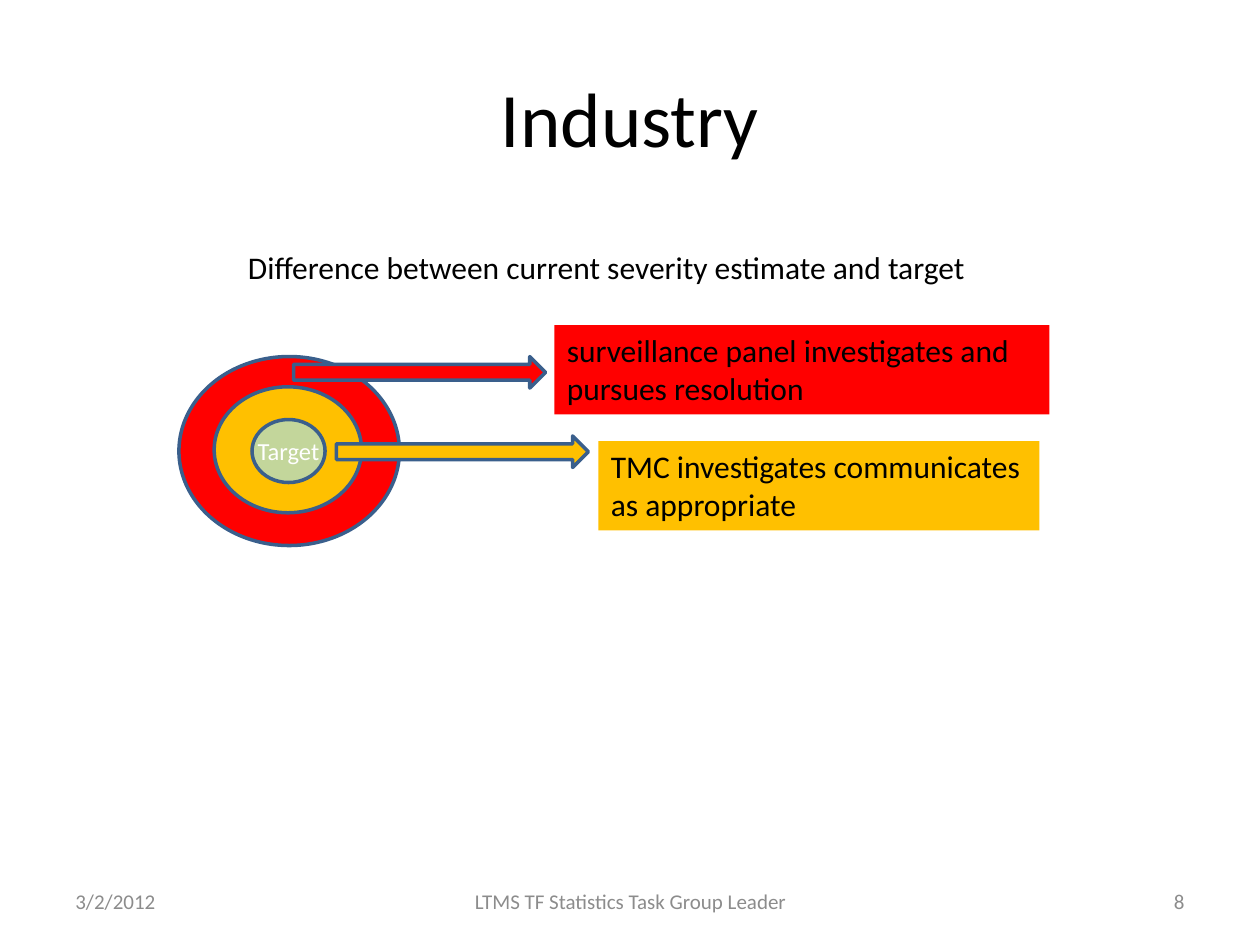
from pptx import Presentation
from pptx.dml.color import RGBColor
from pptx.enum.shapes import MSO_SHAPE
from pptx.enum.text import MSO_ANCHOR, PP_ALIGN
from pptx.util import Inches, Pt

OVAL, ARROW, RECTANGLE = MSO_SHAPE.OVAL, MSO_SHAPE.RIGHT_ARROW, MSO_SHAPE.RECTANGLE
LEFT, CENTER, RIGHT = PP_ALIGN.LEFT, PP_ALIGN.CENTER, PP_ALIGN.RIGHT
TOP, MIDDLE = MSO_ANCHOR.TOP, MSO_ANCHOR.MIDDLE

BLACK = RGBColor(0x00, 0x00, 0x00)
WHITE = RGBColor(0xFF, 0xFF, 0xFF)
GRAY = RGBColor(0x8C, 0x8C, 0x8C)
RED = RGBColor(0xFF, 0x00, 0x00)
AMBER = RGBColor(0xFF, 0xC0, 0x00)
GREEN = RGBColor(0xC3, 0xD6, 0x9B)
OUTLINE = RGBColor(0x3A, 0x5F, 0x8C)
FONT = "Calibri"
TITLE_ONLY = 5


def write_text(shape, text, size=18, color=BLACK, align=LEFT, anchor=TOP, wrap=True):
    frame = shape.text_frame
    frame.word_wrap = wrap
    frame.vertical_anchor = anchor
    paragraph = frame.paragraphs[0]
    paragraph.alignment = align
    run = paragraph.add_run()
    run.text = text
    run.font.name = FONT
    run.font.size = Pt(size)
    run.font.color.rgb = color


def add_text(slide, box, text, **text_format):
    shape = slide.shapes.add_textbox(*map(Inches, box))
    write_text(shape, text, **text_format)


def add_filled_shape(shapes, kind, box, fill, outlined=True):
    shape = shapes.add_shape(kind, *map(Inches, box))
    shape.shadow.inherit = False
    shape.fill.solid()
    shape.fill.fore_color.rgb = fill
    if outlined:
        shape.line.color.rgb = OUTLINE
        shape.line.width = Pt(2)
    else:
        shape.line.fill.background()
    return shape


def add_title(slide, text):
    title = slide.shapes.title
    title.left, title.top = Inches(0.5), Inches(0.3)
    title.width, title.height = Inches(9), Inches(1.25)
    write_text(title, text, size=44, align=CENTER, anchor=MIDDLE)


def add_target_diagram(slide):
    """Draw the rings, the arrows leaving them and the action boxes as one group."""
    shapes = slide.shapes.add_group_shape().shapes
    add_filled_shape(shapes, OVAL, (1.42, 2.83, 1.75, 1.5), RED)
    add_filled_shape(shapes, OVAL, (1.7, 3.07, 1.17, 1), AMBER)
    bullseye = add_filled_shape(shapes, OVAL, (2, 3.33, 0.58, 0.5), GREEN)
    write_text(bullseye, "Target", size=14, color=WHITE, align=CENTER,
               anchor=MIDDLE, wrap=False)

    for left, top, color in ((2.33, 2.83, RED), (2.67, 3.46, AMBER)):
        add_filled_shape(shapes, ARROW, (left, top, 2, 0.25), color)

    actions = (
        ((4.4, 2.58, 3.93, 0.71), RED,
         "surveillance panel investigates and pursues resolution"),
        ((4.75, 3.5, 3.5, 0.71), AMBER,
         "TMC investigates communicates as appropriate"),
    )
    for box, color, text in actions:
        action = add_filled_shape(shapes, RECTANGLE, box, color, outlined=False)
        write_text(action, text)


def add_footer(slide):
    for left, width, text, align in (
        (0.5, 2.33, "3/2/2012", LEFT),
        (3.42, 3.17, "LTMS TF Statistics Task Group Leader", CENTER),
        (7.17, 2.33, "8", RIGHT),
    ):
        add_text(slide, (left, 6.95, width, 0.4), text, size=12, color=GRAY,
                 align=align, anchor=MIDDLE)


def main():
    presentation = Presentation()
    presentation.slide_width = Inches(10)
    presentation.slide_height = Inches(7.5)
    slide = presentation.slides.add_slide(presentation.slide_layouts[TITLE_ONLY])
    add_title(slide, "Industry")
    add_text(slide, (1.87, 1.92, 5.97, 0.4),
             "Difference between current severity estimate and target", wrap=False)
    add_target_diagram(slide)
    add_footer(slide)
    presentation.save("out.pptx")


if __name__ == "__main__":
    main()
